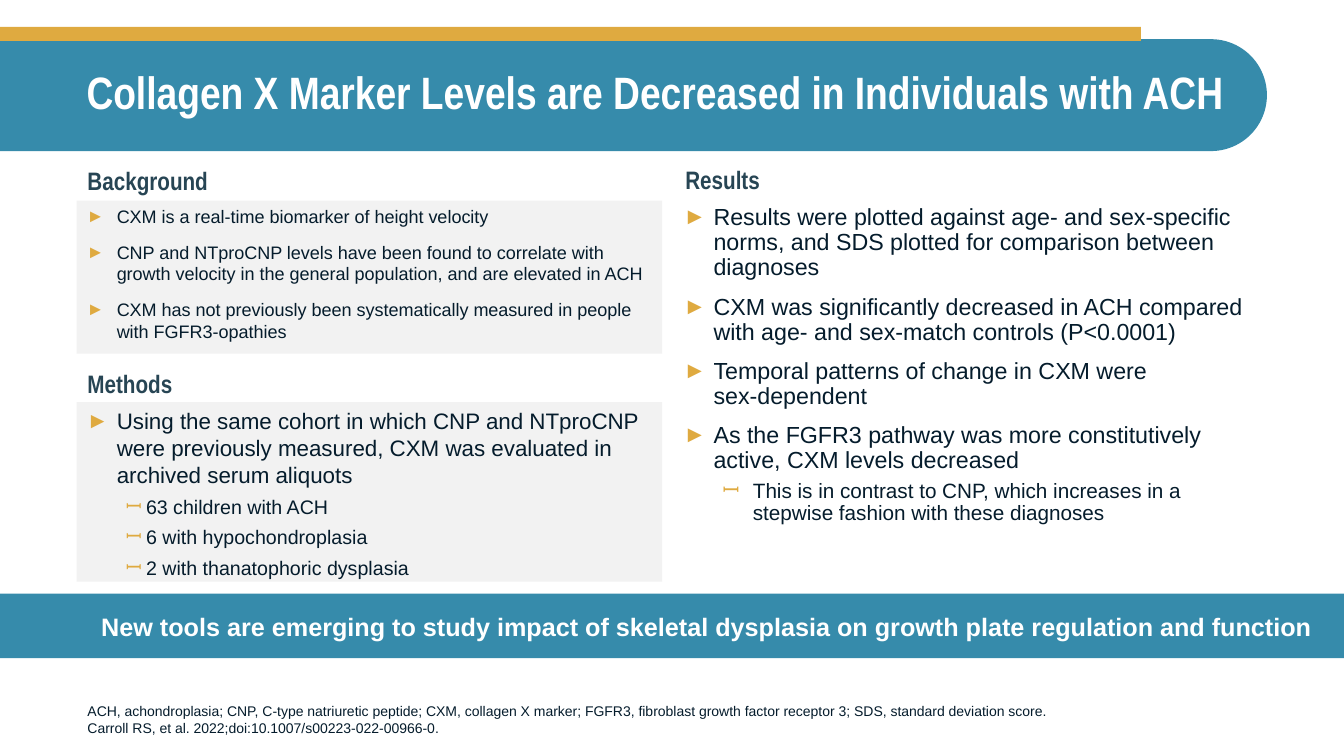
from lxml import etree
from pptx import Presentation
from pptx import util as u
from pptx.dml.color import RGBColor
from pptx.enum import shapes, text
from pptx.oxml import ns

TEAL = RGBColor(0x36, 0x8B, 0xAB)
GOLD = RGBColor(0xDF, 0xAA, 0x40)
SLATE = RGBColor(0x27, 0x45, 0x54)
NAVY = RGBColor(0x05, 0x1C, 0x2C)
PALE = RGBColor(0xF2, 0xF2, 0xF2)
WHITE = RGBColor(0xFF, 0xFF, 0xFF)

LEFT, PANEL_WIDTH = 54.7, 418.3
ANCHOR, ALIGN = text.MSO_ANCHOR, text.PP_ALIGN

TITLE = {"name": "Arial Narrow", "size": u.Pt(32.4), "bold": True, "color": WHITE}
HEADING = {"name": "Arial Narrow", "size": u.Pt(18), "bold": True, "color": SLATE}
TAKEAWAY = {"name": "Arial", "size": u.Pt(18), "bold": True, "color": WHITE}
FOOTNOTE = {"name": "Arial", "size": u.Pt(10), "color": NAVY}

BACKGROUND = [
    (0, "CXM is a real-time biomarker of height velocity"),
    (0, "CNP and NTproCNP levels have been found to correlate with growth velocity "
        "in the general population, and are elevated in ACH"),
    (0, "CXM has not previously been systematically measured in people with FGFR3-opathies"),
]
METHODS = [
    (0, "Using the same cohort in which CNP and NTproCNP were previously measured, "
        "CXM was evaluated in archived serum aliquots"),
    (1, "63 children with ACH"),
    (1, "6 with hypochondroplasia"),
    (1, "2 with thanatophoric dysplasia"),
]
RESULTS = [
    (0, "Results were plotted against age- and sex-specific norms, and SDS plotted "
        "for comparison between diagnoses"),
    (0, "CXM was significantly decreased in ACH compared with age- and sex-match "
        "controls (P<0.0001)"),
    (0, "Temporal patterns of change in CXM were \vsex-dependent"),
    (0, "As the FGFR3 pathway was more constitutively active, CXM levels decreased"),
    (1, "This is in contrast to CNP, which increases in a stepwise fashion with "
        "these diagnoses"),
]
NOTES = [
    "ACH, achondroplasia; CNP, C-type natriuretic peptide; CXM, collagen X marker; "
    "FGFR3, fibroblast growth factor receptor 3; SDS, standard deviation score.",
    "Carroll RS, et al. 2022;doi:10.1007/s00223-022-00966-0.",
]


def set_format(target, values):
    """Apply each format value to the attribute of the same name."""
    for key, value in values.items():
        if key == "color":
            target.color.rgb = value
        else:
            setattr(target, key, value)


def add_block(slide, kind, box, fill):
    """Add a flat filled shape without outline or shadow."""
    block = slide.shapes.add_shape(kind, *map(u.Pt, box))
    block.shadow.inherit = False
    block.fill.solid()
    block.fill.fore_color.rgb = fill
    block.line.fill.background()
    return block


def add_text(slide, box, lines, font, frame=None, paragraph=None):
    """Add a text box holding evenly formatted paragraphs."""
    body = slide.shapes.add_textbox(*map(u.Pt, box)).text_frame
    set_format(body, {"word_wrap": True, **(frame or {})})
    body.text = "\n".join(lines)
    for line in body.paragraphs:
        set_format(line, paragraph or {})
        set_format(line.font, font)


def set_bullet(line, sign, margin, hanging):
    """Give a paragraph a gold bullet with a hanging indent."""
    props = line._p.get_or_add_pPr()
    props.set("marL", str(u.Pt(margin)))
    props.set("indent", str(-u.Pt(hanging)))
    color = etree.SubElement(props, ns.qn("a:buClr"))
    etree.SubElement(color, ns.qn("a:srgbClr"), val=str(GOLD))
    etree.SubElement(props, ns.qn("a:buFont"), typeface="Arial")
    etree.SubElement(props, ns.qn("a:buChar"), char=sign)


def add_bullets(slide, box, items, sizes, sub_indent, spacing=1.0, fill=None):
    """Add a two-level bullet list, on a filled panel if a fill is given."""
    if fill is None:
        panel = slide.shapes.add_textbox(*map(u.Pt, box))
    else:
        panel = add_block(slide, shapes.MSO_SHAPE.RECTANGLE, box, fill)
    body = panel.text_frame
    set_format(body, {"word_wrap": True, "vertical_anchor": ANCHOR.TOP})
    for index, (level, words) in enumerate(items):
        line = body.add_paragraph() if index else body.paragraphs[0]
        line.text = words
        before = u.Pt((10, 5)[level] if index else 0)
        set_format(line, {"level": level, "alignment": ALIGN.LEFT,
                          "line_spacing": spacing, "space_before": before})
        set_bullet(line, "►ꟷ"[level], *((21.6, 21.6), sub_indent)[level])
        set_format(line.font, {"name": "Arial", "size": u.Pt(sizes[level]), "color": NAVY})


def add_takeaway(slide, box, words):
    """Add the full-width band with the closing message."""
    body = add_block(slide, shapes.MSO_SHAPE.RECTANGLE, box, TEAL).text_frame
    set_format(body, {"word_wrap": True, "vertical_anchor": ANCHOR.MIDDLE})
    line = body.paragraphs[0]
    line.text = words
    line.alignment = ALIGN.CENTER
    line._p.get_or_add_pPr().set("marL", str(u.Pt(49.7)))
    set_format(line.font, TAKEAWAY)


def main():
    """Build and save the slide."""
    deck = Presentation()
    set_format(deck, {"slide_width": u.Pt(960), "slide_height": u.Pt(540)})
    slide = deck.slides.add_slide(deck.slide_layouts[6])

    banner = add_block(slide, shapes.MSO_SHAPE.ROUND_2_SAME_RECTANGLE,
                       (412.55, -384.55, 79.9, 905), TEAL)
    banner.rotation = 270
    banner.adjustments[0], banner.adjustments[1] = 0, 0.5
    add_block(slide, shapes.MSO_SHAPE.RECTANGLE, (0, 19.2, 815, 10), GOLD)

    for heading, left, top, width in (("Background", 55.4, 114.5, 101.5),
                                      ("Methods", 55.4, 259.4, 75.6),
                                      ("Results", 482.4, 113.8, 68.4)):
        add_text(slide, (left, top, width, 28.8), [heading], HEADING,
                 {"word_wrap": False, "auto_size": text.MSO_AUTO_SIZE.SHAPE_TO_FIT_TEXT})
    add_text(slide, (LEFT, 28.1, 850.3, 79.2),
             ["Collagen X Marker Levels are Decreased in Individuals with ACH"], TITLE,
             {"vertical_anchor": ANCHOR.MIDDLE}, {"line_spacing": 0.9})

    add_bullets(slide, (LEFT, 143.3, PANEL_WIDTH, 109.4), BACKGROUND, (12.9, 12.9),
                (42.5, 14.4), fill=PALE)
    add_text(slide, (55.4, 483.1, 711.4, 46.1), NOTES, FOOTNOTE,
             {"vertical_anchor": ANCHOR.BOTTOM})
    add_takeaway(slide, (0, 424.1, 960, 46.1),
                 "New tools are emerging to study impact of skeletal dysplasia "
                 "on growth plate regulation and function")
    add_bullets(slide, (481, 143.3, PANEL_WIDTH, 272.2), RESULTS, (16.6, 14.8),
                (49.7, 21.6), spacing=0.9)
    add_bullets(slide, (LEFT, 287.3, PANEL_WIDTH, 128.2), METHODS, (16, 14),
                (42.5, 14.4), fill=PALE)
    deck.save("out.pptx")


if __name__ == "__main__":
    main()
